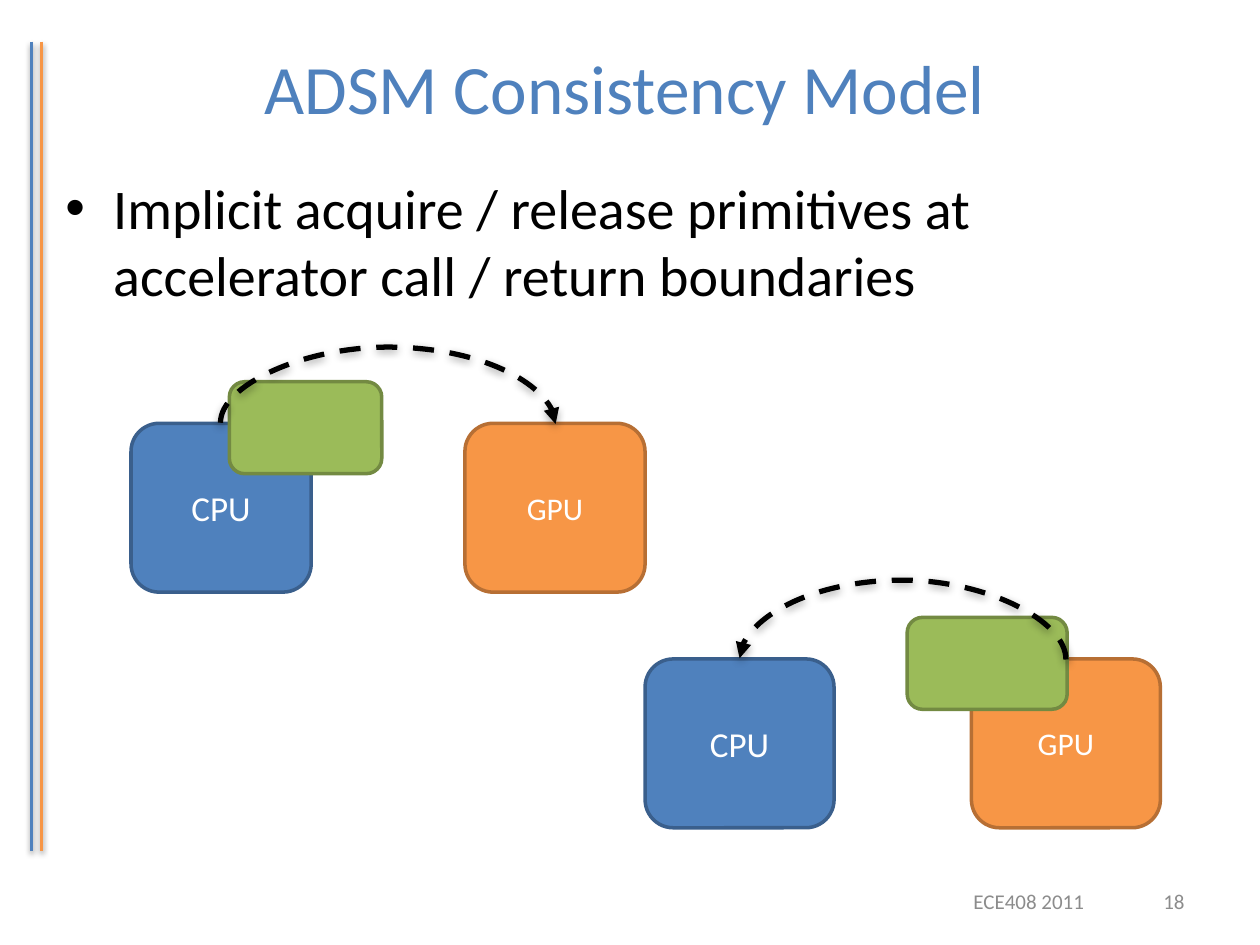
from lxml import etree
from pptx import Presentation
from pptx.dml.color import RGBColor
from pptx.enum.dml import MSO_LINE
from pptx.enum.shapes import MSO_CONNECTOR, MSO_SHAPE
from pptx.enum.text import MSO_ANCHOR, PP_ALIGN
from pptx.oxml.ns import qn
from pptx.util import Inches, Pt

BLUE, ORANGE, GREEN = "4F81BD", "F79646", "9BBB59"
BLACK, WHITE, GRAY = "000000", "FFFFFF", "8C8C8C"
EDGES = {BLUE: "3A5F8C", ORANGE: "B76F34", GREEN: "738A42"}


def color(value):
    return RGBColor.from_string(value)


def write(shape, text, size=18, fill=BLACK, align=PP_ALIGN.CENTER,
          anchor=MSO_ANCHOR.MIDDLE, bullet=False):
    frame = shape.text_frame
    frame.word_wrap = True
    frame.vertical_anchor = anchor
    para = frame.paragraphs[0]
    para.alignment = align
    if bullet:
        props = para._p.get_or_add_pPr()
        props.set("marL", str(Inches(0.38)))
        props.set("indent", str(-Inches(0.38)))
        etree.SubElement(props, qn("a:buFont")).set("typeface", "Arial")
        etree.SubElement(props, qn("a:buChar")).set("char", "•")
    span = para.add_run()
    span.text = text
    span.font.name = "Calibri"
    span.font.size = Pt(size)
    span.font.color.rgb = color(fill)


def add_text(page, box, text, **style):
    write(page.shapes.add_textbox(*map(Inches, box)), text, **style)


def add_shadow(connector, blur, distance, opacity):
    effects = etree.SubElement(connector._element.spPr, qn("a:effectLst"))
    shadow = etree.SubElement(effects, qn("a:outerShdw"), blurRad=str(Pt(blur)),
                              dist=str(Pt(distance)), dir="5400000", rotWithShape="0")
    tint = etree.SubElement(shadow, qn("a:srgbClr"), val=BLACK)
    etree.SubElement(tint, qn("a:alpha"), val=str(opacity * 1000))


def add_block(page, box, fill, text=None, size=18):
    block = page.shapes.add_shape(MSO_SHAPE.ROUNDED_RECTANGLE, *map(Inches, box))
    block.shadow.inherit = False
    block.fill.solid()
    block.fill.fore_color.rgb = color(fill)
    block.line.color.rgb = color(EDGES[fill])
    block.line.width = Pt(2)
    if text:
        write(block, text, size=size, fill=WHITE)


def add_arc(page, start, end, top, rise):
    """Dashed arrow bowing upward: a curved connector turned by 270 degrees."""
    drop, reach = 0.01, abs(end - start)
    left, upper = (start + end - drop) / 2, top - reach / 2
    right, lower = left + drop, upper + reach
    rightward = end > start
    ends = (right, upper, left, lower) if rightward else (left, lower, right, upper)
    arc = page.shapes.add_connector(MSO_CONNECTOR.CURVE, *map(Inches, ends))
    props = arc._element.spPr
    props.find(qn("a:xfrm")).set("rot", "16200000")
    bend = round(rise / drop * 100000) * (-1 if rightward else 1)
    guides = props.find(qn("a:prstGeom")).get_or_add_avLst()
    etree.SubElement(guides, qn("a:gd"), name="adj1", fmla=f"val {bend}")
    arc.line.color.rgb = color(BLACK)
    arc.line.width = Pt(3)
    arc.line.dash_style = MSO_LINE.DASH
    etree.SubElement(arc.line._get_or_add_ln(), qn("a:tailEnd"), type="triangle")
    add_shadow(arc, 5, 1.8, 35)


def add_transfer(page, box, gpu_left, data_box, arc):
    """CPU and GPU blocks, the shared data, and the arrow between the two."""
    left, top, width, height = box
    add_block(page, box, BLUE, "CPU", size=20)
    add_block(page, (gpu_left, top, width, height), ORANGE, "GPU")
    add_block(page, data_box, GREEN)
    add_arc(page, *arc)


def add_side_rules(page, left, top, bottom):
    for x, fill in ((left, BLUE), (left + 0.08, ORANGE)):
        rule = page.shapes.add_connector(
            MSO_CONNECTOR.STRAIGHT, *map(Inches, (x, top, x, bottom)))
        rule.line.color.rgb = color(fill)
        rule.line.width = Pt(2)
        add_shadow(rule, 3.1, 1.6, 38)


def add_title(page, box, text):
    title = page.shapes.title
    title.left, title.top, title.width, title.height = map(Inches, box)
    write(title, text, size=39.6, fill=BLUE)


def add_footer(page, top, height):
    add_text(page, (7.5, top, 1.33, height), "ECE408 2011", size=12, fill=GRAY)
    add_text(page, (8.92, top, 0.58, height), "18", size=12, fill=GRAY,
             align=PP_ALIGN.RIGHT)


def main():
    deck = Presentation()
    deck.slide_width, deck.slide_height = Inches(10), Inches(7.5)
    page = deck.slides.add_slide(deck.slide_layouts[5])

    add_side_rules(page, 0.25, 0.33, 6.75)
    add_title(page, (0.42, 0.3, 9.08, 0.78), "ADSM Consistency Model")
    add_text(page, (0.42, 1.33, 9.08, 5.37),
             "Implicit acquire / release primitives at accelerator call / "
             "return boundaries",
             size=32, align=PP_ALIGN.LEFT, anchor=MSO_ANCHOR.TOP, bullet=True)
    # Accelerator call: CPU to GPU
    add_transfer(page, (1.04, 3.36, 1.43, 1.34), 3.69, (1.82, 3.03, 1.21, 0.73),
                 (1.75, 4.41, 3.36, 0.61))
    # Return: GPU to CPU
    add_transfer(page, (5.12, 5.23, 1.5, 1.34), 7.71, (7.2, 4.9, 1.27, 0.73),
                 (8.46, 5.87, 5.23, 0.64))
    add_footer(page, 6.95, 0.4)
    deck.save("out.pptx")


if __name__ == "__main__":
    main()
